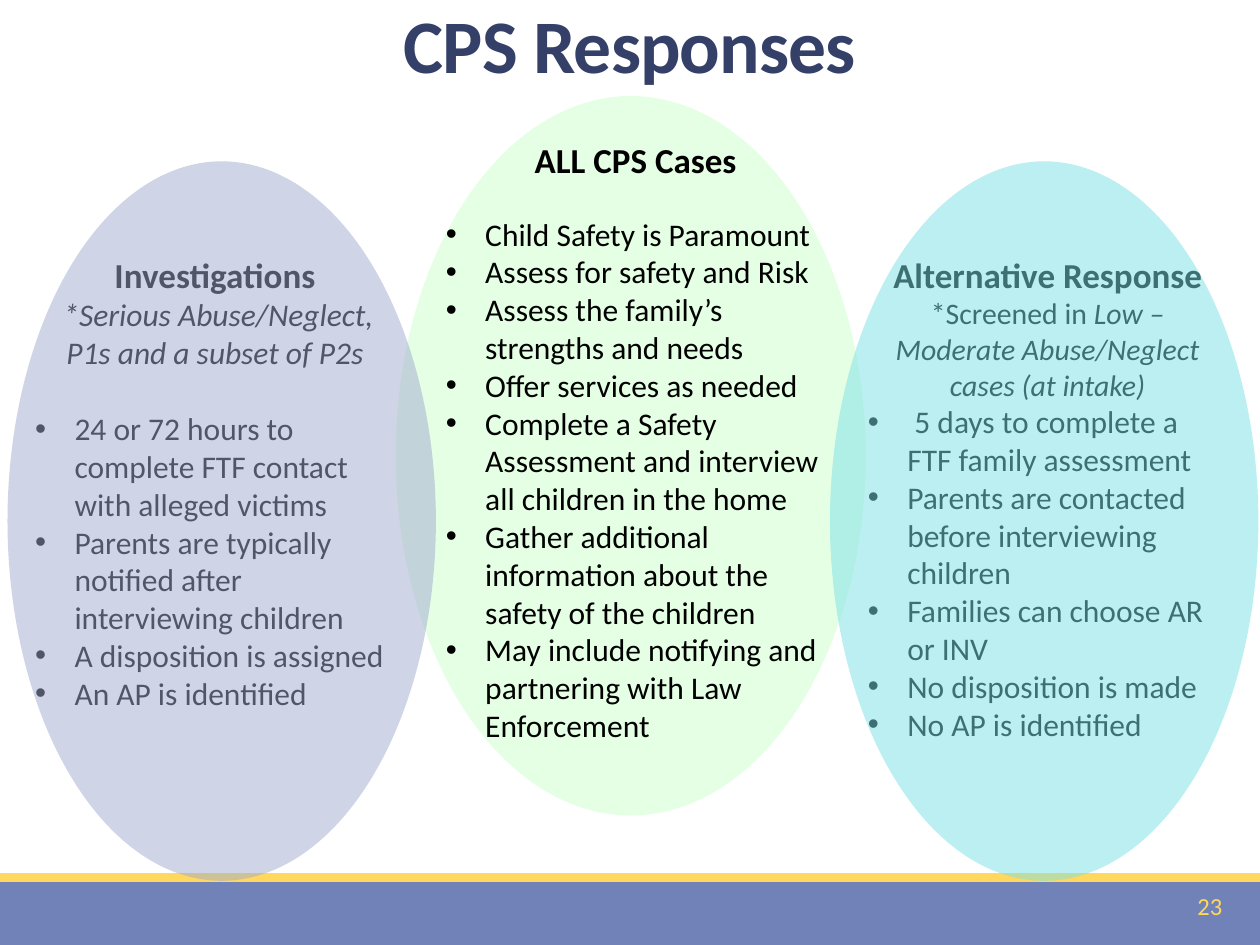
from lxml import etree
from pptx import Presentation
from pptx.dml.color import RGBColor
from pptx.enum import shapes, text
from pptx.oxml import ns
from pptx.util import Pt

NAVY = RGBColor(0x34, 0x40, 0x68)
BLUE = RGBColor(0x71, 0x82, 0xB8)
GOLD = RGBColor(0xFF, 0xD8, 0x5D)
GREEN = RGBColor(0xCC, 0xFF, 0xCC)
AQUA = RGBColor(0x7A, 0xE0, 0xE5)
LAVENDER = RGBColor(0xA1, 0xAB, 0xD0)
BLACK = RGBColor(0, 0, 0)

FONT = "Calibri"
WIDTH, HEIGHT = 720, 540
BAND_TOP, STRIPE = 504, 5
INDENT = 22.5
HEADING_SIZE, BULLET_SIZE = 20, 18

# Subtitle runs are (text, size, italic); gap is the space above the bullets.
COLUMNS = {
    "alternative": {
        "box": (488.9, 141.1, 219.6, 311.8),
        "heading": "Alternative Response",
        "subtitle": [("*Screened in ", 17, False),
                     ("Low – Moderate Abuse/Neglect cases (at intake)", 17, True)],
        "gap": 0,
        "bullets": [" 5 days to complete a FTF family assessment",
                    "Parents are contacted before interviewing children",
                    "Families can choose AR or INV",
                    "No disposition is made",
                    "No AP is identified"],
    },
    "all cases": {
        "box": (247.7, 75.6, 231.1, 356.4),
        "heading": "ALL CPS Cases",
        "subtitle": [],
        "gap": 19.5,
        "bullets": ["Child Safety is Paramount",
                    "Assess for safety and Risk",
                    "Assess the family’s strengths and needs",
                    "Offer services as needed",
                    "Complete a Safety Assessment and interview all children in the home",
                    "Gather additional information about the safety of the children",
                    "May include notifying and partnering with Law Enforcement"],
    },
    "investigations": {
        "box": (13, 141.1, 219.6, 293),
        "heading": "Investigations",
        "subtitle": [(" *Serious Abuse/Neglect, P1s and a subset of P2s", 18, True)],
        "gap": 22,
        "bullets": ["24 or 72 hours to complete FTF contact with alleged victims",
                    "Parents are typically notified after interviewing children",
                    "A disposition is assigned",
                    "An AP is identified"],
    },
}
CENTRE_OVAL = (226.1, 54.9, 268.6, 411.1)
SIDE_OVALS = [((474.3, 92.2, 244.8, 411.1), AQUA),
              ((4.3, 92.2, 244.8, 411.1), LAVENDER)]


def points(box):
    return [Pt(value) for value in box]


def add_filled(slide, kind, box, color, opacity=100):
    shape = slide.shapes.add_shape(kind, *points(box))
    shape.shadow.inherit = False
    shape.line.fill.background()
    shape.fill.solid()
    shape.fill.fore_color.rgb = color
    if opacity < 100:
        color_element = shape.fill._xPr.find(".//" + ns.qn("a:srgbClr"))
        etree.SubElement(color_element, ns.qn("a:alpha"), val=str(opacity * 1000))


def add_run(paragraph, words, color=BLACK, **formats):
    run = paragraph.add_run()
    run.text = words
    run.font.color.rgb = color
    for name, value in {"name": FONT, "bold": False, "italic": False, **formats}.items():
        setattr(run.font, name, value)
    return run


def add_bullet(paragraph):
    properties = paragraph._p.get_or_add_pPr()
    properties.set("marL", str(Pt(INDENT)))
    properties.set("indent", str(-Pt(INDENT)))
    etree.SubElement(properties, ns.qn("a:buFont"), typeface="Arial")
    etree.SubElement(properties, ns.qn("a:buChar"), char="•")


def add_column(slide, column):
    frame = slide.shapes.add_textbox(*points(column["box"])).text_frame
    frame.word_wrap = True
    heading = frame.paragraphs[0]
    heading.alignment = text.PP_ALIGN.CENTER
    add_run(heading, column["heading"], size=Pt(HEADING_SIZE), bold=True)
    if column["subtitle"]:
        subtitle = frame.add_paragraph()
        subtitle.alignment = text.PP_ALIGN.CENTER
        for words, size, italic in column["subtitle"]:
            add_run(subtitle, words, size=Pt(size), italic=italic)
    for index, words in enumerate(column["bullets"]):
        paragraph = frame.add_paragraph()
        paragraph.alignment = text.PP_ALIGN.LEFT
        paragraph.space_before = Pt(0 if index else column["gap"])
        add_bullet(paragraph)
        add_run(paragraph, words, size=Pt(BULLET_SIZE))


def add_title(slide):
    title = slide.shapes.title
    title.left, title.top, title.width, title.height = points((0, -0.7, WIDTH, 55.4))
    frame = title.text_frame
    frame.auto_size = text.MSO_AUTO_SIZE.NONE
    frame.vertical_anchor = text.MSO_ANCHOR.BOTTOM
    paragraph = frame.paragraphs[0]
    paragraph.alignment = text.PP_ALIGN.CENTER
    paragraph.line_spacing = 0.85
    run = add_run(paragraph, "CPS Responses", NAVY, size=Pt(43.2), bold=True)
    run.font._element.set("spc", "-50")


def add_page_number(slide):
    frame = slide.shapes.add_textbox(*points((537.8, 503.3, 167.8, 28.8))).text_frame
    frame.word_wrap = True
    frame.vertical_anchor = text.MSO_ANCHOR.MIDDLE
    frame.paragraphs[0].alignment = text.PP_ALIGN.RIGHT
    add_run(frame.paragraphs[0], "23", GOLD, size=Pt(14))


def main():
    presentation = Presentation()
    presentation.slide_width, presentation.slide_height = Pt(WIDTH), Pt(HEIGHT)
    slide = presentation.slides.add_slide(presentation.slide_layouts[5])
    rectangle, oval = shapes.MSO_SHAPE.RECTANGLE, shapes.MSO_SHAPE.OVAL
    add_filled(slide, rectangle, (0, BAND_TOP, WIDTH, HEIGHT - BAND_TOP), BLUE)
    add_filled(slide, rectangle, (0, BAND_TOP - STRIPE, WIDTH, STRIPE), GOLD)
    add_page_number(slide)
    add_title(slide)
    add_filled(slide, oval, CENTRE_OVAL, GREEN, 50)
    for column in COLUMNS.values():
        add_column(slide, column)
    # The side ovals lie over their text and tint it.
    for box, color in SIDE_OVALS:
        add_filled(slide, oval, box, color, 50)
    presentation.save("out.pptx")


if __name__ == "__main__":
    main()
